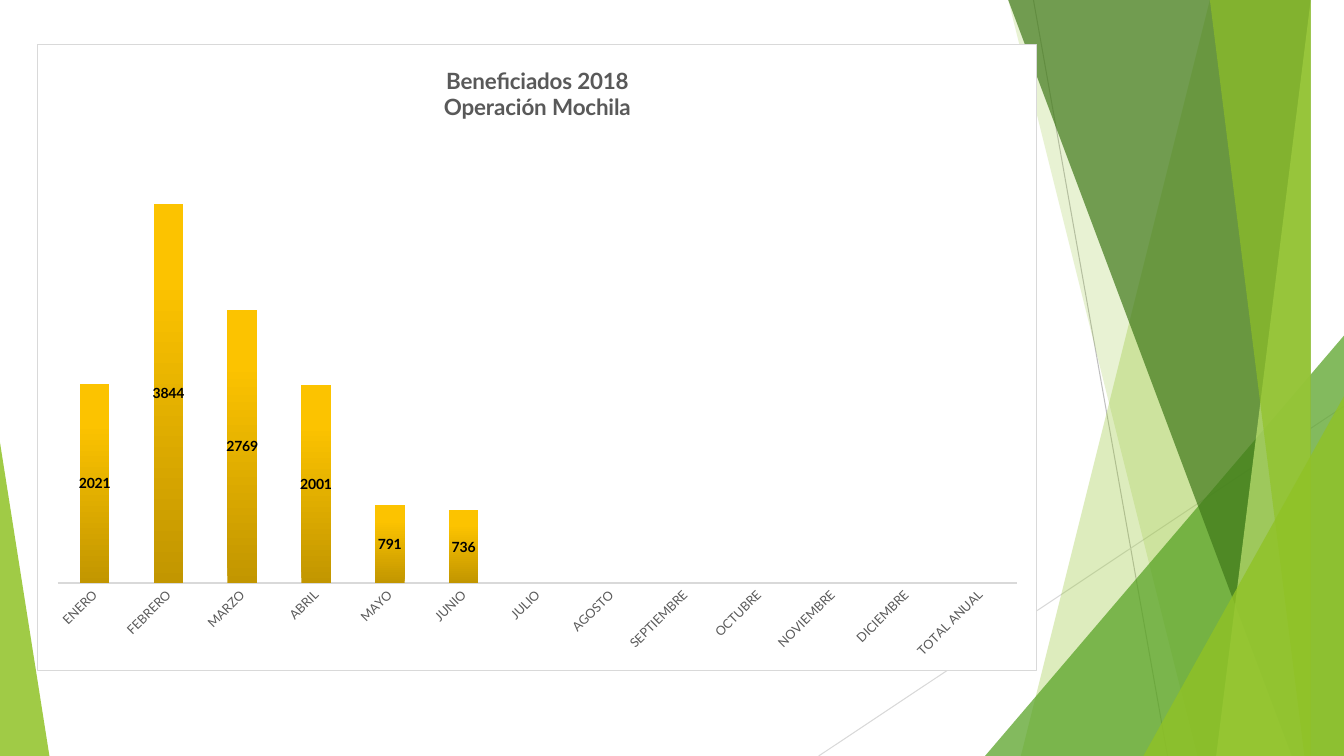
from copy import deepcopy
from dataclasses import dataclass

from lxml.etree import SubElement
from pptx import Presentation
from pptx.chart.data import CategoryChartData
from pptx.dml.color import RGBColor
from pptx.enum.chart import XL_CHART_TYPE as ChartType
from pptx.enum.chart import XL_LABEL_POSITION as LabelPosition
from pptx.enum.chart import XL_TICK_MARK as TickMark
from pptx.enum.shapes import MSO_CONNECTOR as Connector
from pptx.enum.shapes import MSO_SHAPE as Shape
from pptx.oxml import parse_xml
from pptx.oxml.ns import nsdecls, qn
from pptx.util import Inches, Pt

WIDTH, HEIGHT = 13.33, 7.5
FONT = "Lato"
BLACK = RGBColor(0x00, 0x00, 0x00)
TEXT_GRAY = RGBColor(0x59, 0x59, 0x59)
LINE_GRAY = RGBColor(0xBF, 0xBF, 0xBF)
LIGHT_GRAY = RGBColor(0xD9, 0xD9, 0xD9)
LIME = RGBColor(0x90, 0xC2, 0x26)
PALE_LIME = RGBColor(0xC0, 0xE4, 0x74)
GREEN = RGBColor(0x54, 0xA0, 0x21)
DARK_GREEN = RGBColor(0x3F, 0x78, 0x19)
GOLD_STOPS = [
    (0, RGBColor(0xC2, 0x96, 0x00)),
    (0.8, RGBColor(0xFC, 0xC3, 0x00)),
    (1, RGBColor(0xFD, 0xC4, 0x00)),
]

MONTHS = ["ENERO", "FEBRERO", "MARZO", "ABRIL", "MAYO", "JUNIO", "JULIO",
          "AGOSTO", "SEPTIEMBRE", "OCTUBRE", "NOVIEMBRE", "DICIEMBRE",
          "TOTAL ANUAL"]
BENEFITED = [2021, 3844, 2769, 2001, 791, 736]
TITLE_LINES = ["Beneficiados 2018", "Operación Mochila"]


@dataclass
class Ray:
    start: tuple[float, float]
    end: tuple[float, float]
    color: RGBColor


@dataclass
class Panel:
    """Area from a slanted left edge to the right side of the slide."""
    top_x: float
    bottom_x: float
    color: RGBColor
    opacity: int


@dataclass
class Wedge:
    """Triangle standing on the bottom of the slide."""
    left: float
    top: float
    width: float
    apex: float
    color: RGBColor
    opacity: int


DECORATION = [
    Ray((10.25, 0), (11.58, HEIGHT), LINE_GRAY),
    Ray((WIDTH, 4.03), (8.12, HEIGHT), LIGHT_GRAY),
    Panel(12.28, 10.04, LIME, 30),
    Panel(10.5, 11.83, LIME, 20),
    Wedge(9.77, 3.33, 3.56, 1, GREEN, 72),
    Panel(10.21, 12.91, DARK_GREEN, 70),
    Panel(13.03, 11.92, PALE_LIME, 70),
    Panel(11.96, 13.18, LIME, 65),
    Wedge(11.34, 3.93, 1.99, 1, LIME, 80),
    Wedge(0, 4.39, 0.49, 0, LIME, 85),
]


def set_format(target, values: dict) -> None:
    for name, value in values.items():
        setattr(target, name, value)


def set_font(font, size: float, color: RGBColor, bold: bool = False) -> None:
    set_format(font, {"name": FONT, "size": Pt(size), "bold": bold})
    font.color.rgb = color


def paint(shape, color: RGBColor, opacity: int) -> None:
    shape.shadow.inherit = False
    shape.fill.solid()
    shape.fill.fore_color.rgb = color
    shape.line.fill.background()
    color_element = shape.fill._xPr.find(f".//{qn('a:srgbClr')}")
    SubElement(color_element, qn("a:alpha")).set("val", str(opacity * 1000))


def draw_ray(slide, ray: Ray) -> None:
    points = [Inches(value) for value in (*ray.start, *ray.end)]
    connector = slide.shapes.add_connector(Connector.STRAIGHT, *points)
    connector.line.color.rgb = ray.color
    connector.line.width = Pt(0.75)
    SubElement(connector._element.spPr, qn("a:effectLst"))


def draw_panel(slide, panel: Panel) -> None:
    builder = slide.shapes.build_freeform(panel.top_x, -0.01, scale=Inches(1))
    builder.add_line_segments(
        [(WIDTH, -0.01), (WIDTH, HEIGHT), (panel.bottom_x, HEIGHT)], close=True)
    paint(builder.convert_to_shape(), panel.color, panel.opacity)


def draw_wedge(slide, wedge: Wedge) -> None:
    shape = slide.shapes.add_shape(
        Shape.ISOSCELES_TRIANGLE, Inches(wedge.left), Inches(wedge.top),
        Inches(wedge.width), Inches(HEIGHT - wedge.top))
    shape.adjustments[0] = wedge.apex
    paint(shape, wedge.color, wedge.opacity)


def fill_gold(series) -> None:
    fill = series.format.fill
    fill.gradient()
    fill.gradient_angle = 90
    stop_list = series._element.find(f".//{qn('a:gsLst')}")
    stop_list.append(deepcopy(stop_list[-1]))
    for stop, (position, color) in zip(fill.gradient_stops, GOLD_STOPS):
        stop.position = position
        stop.color.rgb = color


def frame_chart(chart) -> None:
    """White background, thin border and a fixed plot area."""
    chart._chartSpace.chart.addnext(parse_xml(
        f'<c:spPr {nsdecls("c", "a")}>'
        '<a:solidFill><a:srgbClr val="FFFFFF"/></a:solidFill>'
        f'<a:ln w="{Pt(0.75)}"><a:solidFill><a:srgbClr val="{LIGHT_GRAY}"/>'
        '</a:solidFill></a:ln></c:spPr>'))
    plot_area = chart._chartSpace.chart.plotArea
    for old_layout in plot_area.findall(qn("c:layout")):
        plot_area.remove(old_layout)
    box = {"x": 0.02, "y": 0.15, "w": 0.96, "h": 0.71}
    sizes = "".join(f'<c:{key} val="{value}"/>' for key, value in box.items())
    plot_area.insert(0, parse_xml(
        f'<c:layout {nsdecls("c")}><c:manualLayout>'
        '<c:layoutTarget val="inner"/><c:xMode val="edge"/>'
        f'<c:yMode val="edge"/>{sizes}</c:manualLayout></c:layout>'))


def draw_chart(slide) -> None:
    data = CategoryChartData()
    data.categories = MONTHS
    missing = [None] * (len(MONTHS) - len(BENEFITED))
    data.add_series("Series 1", BENEFITED + missing)
    chart = slide.shapes.add_chart(
        ChartType.COLUMN_STACKED, Inches(0.37), Inches(0.44),
        Inches(9.92), Inches(6.22), data).chart
    set_font(chart.font, 10, BLACK)
    frame_chart(chart)
    chart.has_legend = False

    # Title
    title_frame = chart.chart_title.text_frame
    for index, line in enumerate(TITLE_LINES):
        paragraph = (title_frame.add_paragraph() if index
                     else title_frame.paragraphs[0])
        run = paragraph.add_run()
        run.text = line
        set_font(run.font, 16, TEXT_GRAY, bold=True)

    # Axes
    set_format(chart.value_axis, {
        "visible": False, "has_major_gridlines": False,
        "minimum_scale": 0, "maximum_scale": 4500})
    months_axis = chart.category_axis
    set_format(months_axis, {
        "major_tick_mark": TickMark.NONE, "minor_tick_mark": TickMark.NONE})
    set_font(months_axis.tick_labels.font, 9, TEXT_GRAY)
    months_axis.tick_labels._element.txPr.bodyPr.set("rot", "-2700000")
    months_axis.format.line.color.rgb = LIGHT_GRAY
    months_axis.format.line.width = Pt(1)

    # Columns and their labels
    plot = chart.plots[0]
    set_format(plot, {
        "gap_width": 150, "overlap": 100, "vary_by_categories": False})
    fill_gold(plot.series[0])
    labels = plot.series[0].data_labels
    set_format(labels, {"show_value": True, "position": LabelPosition.CENTER})
    set_font(labels.font, 10, BLACK, bold=True)


def main() -> None:
    presentation = Presentation()
    presentation.slide_width = Inches(WIDTH)
    presentation.slide_height = Inches(HEIGHT)
    slide = presentation.slides.add_slide(presentation.slide_layouts[6])
    draw = {Ray: draw_ray, Panel: draw_panel, Wedge: draw_wedge}
    for part in DECORATION:
        draw[type(part)](slide, part)
    draw_chart(slide)
    presentation.save("out.pptx")


if __name__ == "__main__":
    main()
